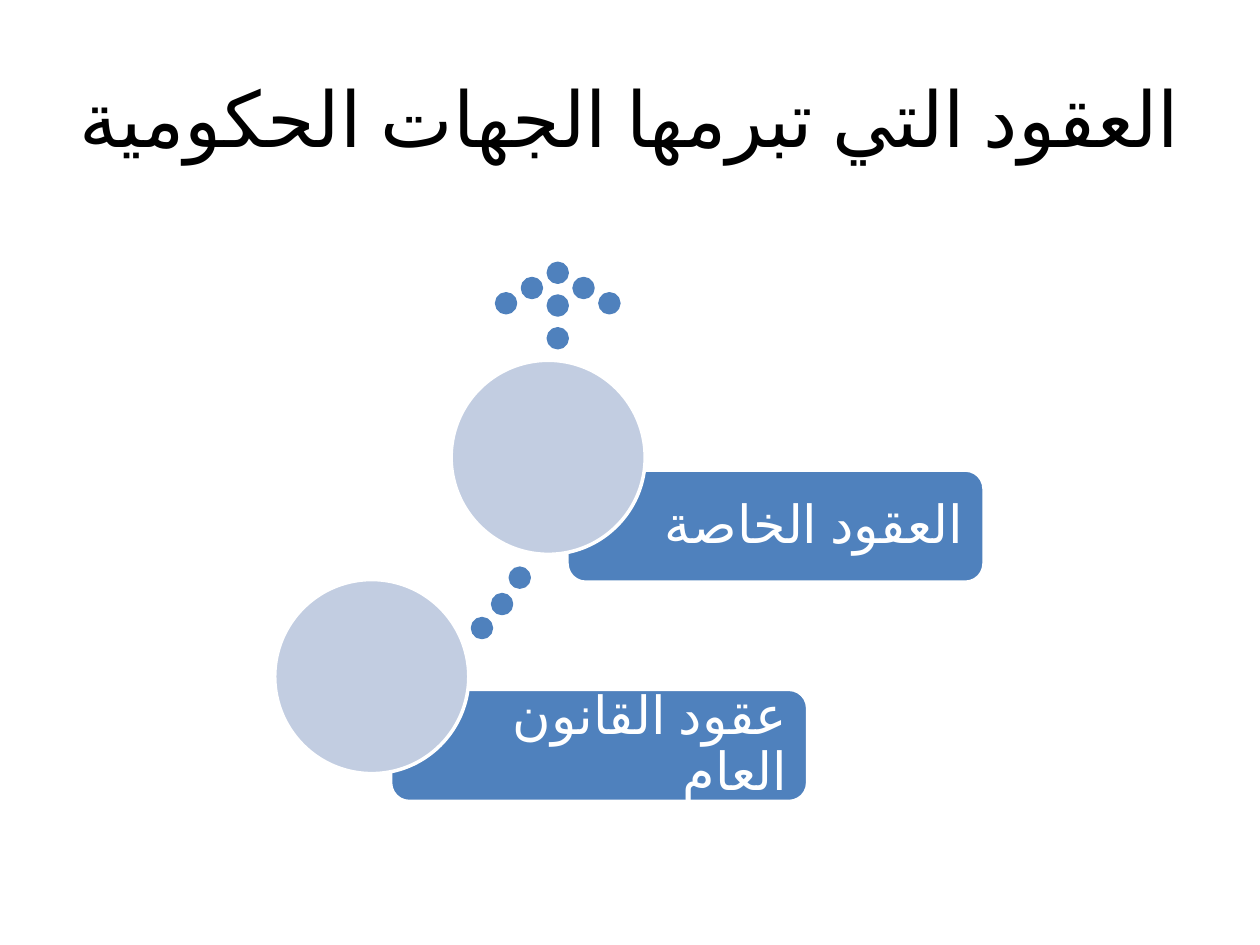
from dataclasses import dataclass

from pptx import Presentation
from pptx.dml.color import RGBColor
from pptx.enum.lang import MSO_LANGUAGE_ID as Lang
from pptx.enum.shapes import MSO_SHAPE as Shape
from pptx.enum.text import MSO_ANCHOR as Anchor, PP_ALIGN as Align
from pptx.util import Pt

COLORS = {"blue": "4F81BD", "pale": "C2CDE1", "white": "FFFFFF", "black": "000000"}
FONT = "Calibri"
DOT = 10.8
CIRCLE = 110.9
BAR_W, BAR_H = 238.3, 64.1
BAR_DX, BAR_DY = 66.2, 62.7  # bar position relative to its circle


@dataclass
class Step:
    text: str
    left: float
    top: float


STEPS = [
    Step("عقود القانون العام", 157, 331.2),
    Step("العقود الخاصة", 257.8, 205.9),
]

# Dots: a diagonal trail, then an arrow of a head and a shaft
TRAIL = [(291.6, 324.7), (281.5, 339.8), (270, 353.5)]
TIP_X, TIP_Y = 313.3, 150.5
HEAD = [(TIP_X + 14.76 * i, TIP_Y + 8.7 * abs(i)) for i in range(-2, 3)]
SHAFT = [(TIP_X, TIP_Y + 18.7 * i) for i in (1, 2)]


def format_rtl(p, size: float, color: str, align: Align) -> None:
    p.alignment = align
    p.font.size = Pt(size)
    p.font.color.rgb = rgb(color)
    p.font.name = FONT
    p.font.language_id = Lang.ARABIC
    p.runs[0].font.language_id = Lang.ARABIC
    p._p.get_or_add_pPr().set("rtl", "1")


def rgb(name: str) -> RGBColor:
    return RGBColor.from_string(COLORS[name])


def add_shape(slide, kind: Shape, left: float, top: float, width: float,
              height: float, fill: str, line: str):
    s = slide.shapes.add_shape(kind, Pt(left), Pt(top), Pt(width), Pt(height))
    s.shadow.inherit = False
    s.fill.solid()
    s.fill.fore_color.rgb = rgb(fill)
    s.line.color.rgb = rgb(line)
    s.line.width = Pt(2)
    return s


def add_step(slide, step: Step) -> None:
    bar = add_shape(slide, Shape.ROUNDED_RECTANGLE, step.left + BAR_DX,
                    step.top + BAR_DY, BAR_W, BAR_H, "blue", "white")
    tf = bar.text_frame
    tf.word_wrap = True
    tf.vertical_anchor = Anchor.MIDDLE
    tf.margin_left = Pt(50.4)
    tf.margin_right = tf.margin_top = tf.margin_bottom = Pt(8.6)
    tf.text = step.text
    p = tf.paragraphs[0]
    p.line_spacing = 0.9
    format_rtl(p, 30, "white", Align.RIGHT)
    add_shape(slide, Shape.OVAL, step.left, step.top, CIRCLE, CIRCLE, "pale", "white")


def main() -> None:
    prs = Presentation()
    prs.slide_width, prs.slide_height = Pt(720), Pt(540)
    slide = prs.slides.add_slide(prs.slide_layouts[5])

    # Title
    title = slide.shapes.title
    title.left, title.top, title.width, title.height = Pt(36), Pt(21.6), Pt(648), Pt(90)
    tf = title.text_frame
    tf.text = "العقود التي تبرمها الجهات الحكومية"
    tf.vertical_anchor = Anchor.MIDDLE
    format_rtl(tf.paragraphs[0], 44, "black", Align.CENTER)

    # Dotted arrow and trail
    for x, y in TRAIL + HEAD + SHAFT:
        add_shape(slide, Shape.OVAL, x, y, DOT, DOT, "blue", "blue")

    # Steps, lower one first
    for step in STEPS:
        add_step(slide, step)

    prs.save("out.pptx")


if __name__ == "__main__":
    main()
